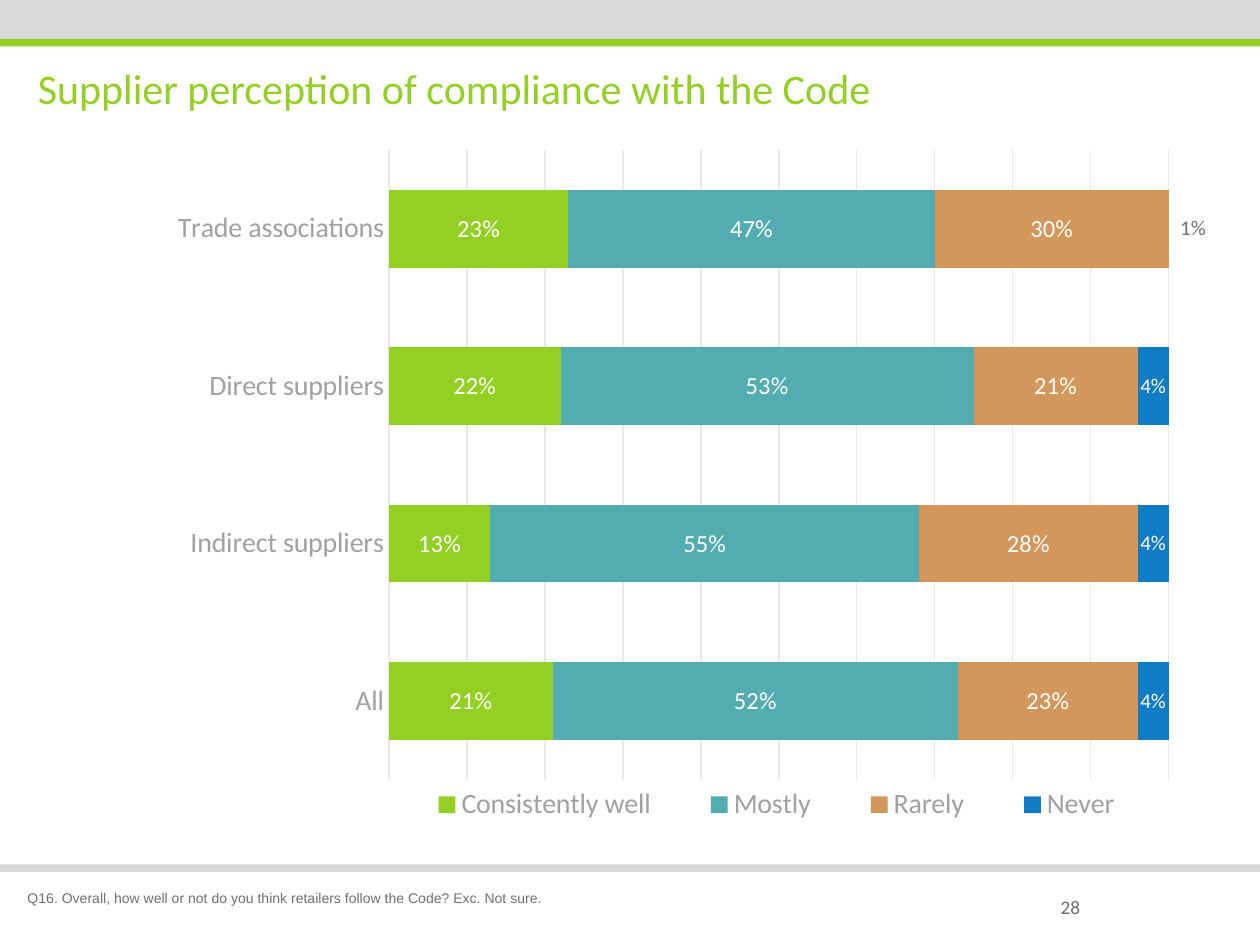
from dataclasses import dataclass

from lxml.etree import SubElement
from pptx import Presentation
from pptx.chart.chart import Chart
from pptx.chart.data import CategoryChartData
from pptx.dml.color import RGBColor
from pptx.enum.chart import XL_CHART_TYPE, XL_LEGEND_POSITION, XL_TICK_LABEL_POSITION, XL_TICK_MARK
from pptx.enum.shapes import MSO_SHAPE
from pptx.enum.text import MSO_ANCHOR, PP_ALIGN
from pptx.oxml import parse_xml
from pptx.oxml.ns import nsdecls, qn
from pptx.slide import Slide
from pptx.text.text import Font
from pptx.util import Inches, Pt

GREEN, SILVER, WHITE = "93D023", "D9D9D9", "FFFFFF"
DARK_GREY, MID_GREY, GRID_GREY = "6D6F71", "A0A1A3", "E9E9EA"
CATEGORIES = ["Trade associations", "Direct suppliers", "Indirect suppliers", "All"]


@dataclass
class Band:
    top: float
    height: float
    color: str


@dataclass
class Note:
    text: str
    left: float
    top: float
    width: float
    height: float
    size: int
    font_name: str
    anchor: MSO_ANCHOR


@dataclass
class Answer:
    name: str
    values: list[float]
    color: str
    label_size: int = 14


BANDS = [Band(0, 0.31, SILVER), Band(6.86, 0.06, SILVER), Band(0.31, 0.06, GREEN)]
NOTES = [
    Note("28", 8.32, 6.94, 0.77, 0.52, 11, "Calibri", MSO_ANCHOR.MIDDLE),
    Note("Q16. Overall, how well or not do you think retailers follow the Code? Exc. Not sure.",
         0.12, 7.01, 6.06, 0.24, 8, "Arial", MSO_ANCHOR.TOP),
]
ANSWERS = [
    Answer("Consistently well", [0.23, 0.22, 0.13, 0.21], GREEN),
    Answer("Mostly", [0.47, 0.53, 0.55, 0.52], "53ACAF"),
    Answer("Rarely", [0.3, 0.21, 0.28, 0.23], "D3975B"),
    Answer("Never", [0.01, 0.04, 0.04, 0.04], "117CC6", 12),
]


def rgb(color: str) -> RGBColor:
    """Turn a hex string into a colour."""
    return RGBColor.from_string(color)


def style_font(font: Font, size: int, color: str, name: str = "Calibri") -> None:
    """Set size, colour and typeface of a font."""
    font.size, font.name = Pt(size), name
    font.color.rgb = rgb(color)


def add_band(slide: Slide, band: Band) -> None:
    """Draw a full-width horizontal band."""
    shape = slide.shapes.add_shape(
        MSO_SHAPE.RECTANGLE, 0, Inches(band.top), Inches(10), Inches(band.height))
    shape.shadow.inherit = False
    shape.fill.solid()
    shape.fill.fore_color.rgb = rgb(band.color)
    shape.line.fill.background()


def add_title(slide: Slide, text: str) -> None:
    """Fill and place the title placeholder."""
    title = slide.shapes.title
    title.left, title.top = Inches(0.2), Inches(0.44)
    title.width, title.height = Inches(9.69), Inches(0.51)
    title.text_frame.text = text
    title.text_frame.vertical_anchor = MSO_ANCHOR.MIDDLE
    paragraph = title.text_frame.paragraphs[0]
    paragraph.alignment = PP_ALIGN.LEFT
    style_font(paragraph.font, 24, GREEN)


def add_note(slide: Slide, note: Note) -> None:
    """Add a small text box at the foot of the slide."""
    box = slide.shapes.add_textbox(
        Inches(note.left), Inches(note.top), Inches(note.width), Inches(note.height))
    frame = box.text_frame
    frame.word_wrap = True
    frame.vertical_anchor = note.anchor
    frame.text = note.text
    style_font(frame.paragraphs[0].font, note.size, DARK_GREY, note.font_name)


def manual_layout(**settings: str | float):
    """Build a chart layout element from its settings."""
    layout = parse_xml(f"<c:layout {nsdecls('c')}><c:manualLayout/></c:layout>")
    for name, value in settings.items():
        SubElement(layout[0], qn(f"c:{name}")).set("val", str(value))
    return layout


def style_axes(chart: Chart) -> None:
    """Format the category and value axes."""
    category_axis, value_axis = chart.category_axis, chart.value_axis
    category_axis.reverse_order = True
    category_axis.format.line.color.rgb = rgb(GRID_GREY)
    category_axis.format.line.width = Pt(0.75)
    style_font(category_axis.tick_labels.font, 16, MID_GREY)
    value_axis.minimum_scale, value_axis.maximum_scale = 0, 1
    value_axis.major_unit = 0.1
    value_axis.tick_label_position = XL_TICK_LABEL_POSITION.NONE
    value_axis.format.line.fill.background()
    gridline = value_axis.major_gridlines.format.line
    gridline.color.rgb = rgb(GRID_GREY)
    gridline.width = Pt(0.75)
    for axis in (category_axis, value_axis):
        axis.major_tick_mark = axis.minor_tick_mark = XL_TICK_MARK.NONE


def style_series(chart: Chart) -> None:
    """Colour and label each series, moving the smallest label beside its bar."""
    plot = chart.plots[0]
    plot.gap_width, plot.overlap = 102, 100
    plot.vary_by_categories = False
    for series, answer in zip(plot.series, ANSWERS):
        series.format.fill.solid()
        series.format.fill.fore_color.rgb = rgb(answer.color)
        labels = series.data_labels
        labels.show_value = True
        labels.number_format, labels.number_format_is_linked = "0%", False
        style_font(labels.font, answer.label_size, WHITE)
    style_font(series.points[0].data_label.font, 12, DARK_GREY)
    label = labels._element.find(qn("c:dLbl"))
    label.insert(1, manual_layout(x=0.02, y=0))
    label.insert(2, parse_xml(f'<c:numFmt {nsdecls("c")} formatCode="0%" sourceLinked="0"/>'))


def add_compliance_chart(slide: Slide) -> None:
    """Add the stacked bar chart with its legend."""
    data = CategoryChartData(number_format="0%")
    data.categories = CATEGORIES
    for answer in ANSWERS:
        data.add_series(answer.name, answer.values)
    chart = slide.shapes.add_chart(
        XL_CHART_TYPE.BAR_STACKED, Inches(0.09), Inches(1.07),
        Inches(9.64), Inches(5.51), data).chart
    chart.has_title = False
    style_font(chart.font, 10, DARK_GREY)
    style_axes(chart)
    style_series(chart)
    chart.has_legend = True
    legend = chart.legend
    legend.position, legend.include_in_layout = XL_LEGEND_POSITION.BOTTOM, False
    style_font(legend.font, 16, MID_GREY)
    legend._element.find(qn("c:legendPos")).addnext(manual_layout(
        xMode="edge", yMode="edge", x=0.31, y=0.93, w=0.64, h=0.07))
    plot_area = chart._chartSpace.chart.plotArea
    for layout in plot_area.findall(qn("c:layout")):
        plot_area.remove(layout)
    plot_area.insert(0, manual_layout(
        layoutTarget="inner", xMode="edge", yMode="edge", x=0.311, y=0.022, w=0.642, h=0.907))


def main() -> None:
    """Build and save the slide."""
    presentation = Presentation()
    presentation.slide_width, presentation.slide_height = Inches(10), Inches(7.5)
    slide = presentation.slides.add_slide(presentation.slide_layouts[5])
    for band in BANDS:
        add_band(slide, band)
    add_title(slide, "Supplier perception of compliance with the Code")
    add_compliance_chart(slide)
    for note in NOTES:
        add_note(slide, note)
    presentation.save("out.pptx")


if __name__ == "__main__":
    main()
